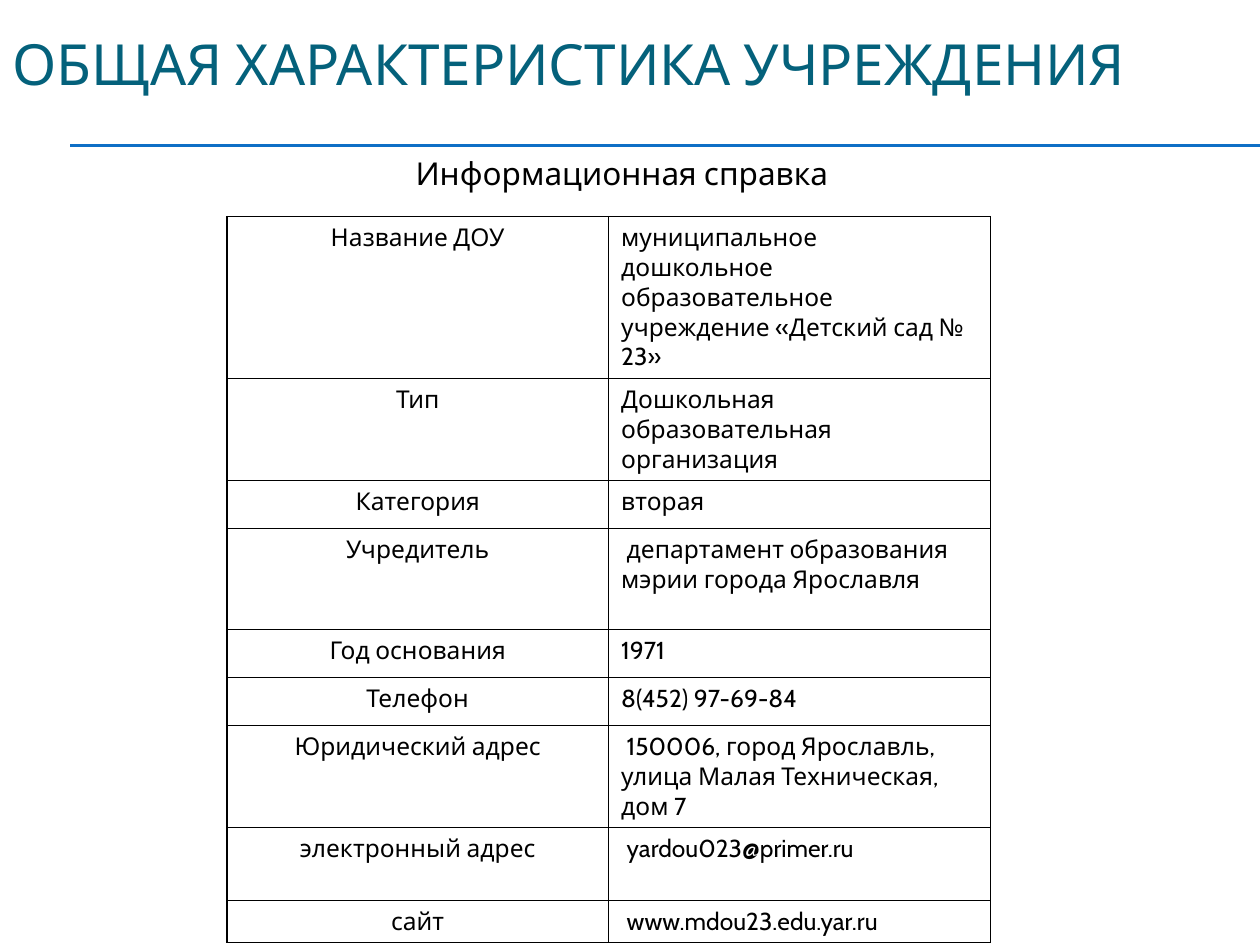
import lxml.etree
import pptx
import pptx.dml.color
import pptx.enum.shapes
import pptx.enum.text
import pptx.oxml
import pptx.oxml.ns
import pptx.util

Pt = pptx.util.Pt
ALIGN = pptx.enum.text.PP_ALIGN
ANCHOR = pptx.enum.text.MSO_ANCHOR
FONT = "Cabin"
BLACK = "000000"
TITLE_COLOR = "04617B"
RULE_COLOR = "0F6FC6"

# Label, value, row height
FACTS = [
    ("Название ДОУ", "муниципальное  дошкольное образовательное учреждение «Детский сад № 23»", 92.5),
    ("Тип", "Дошкольная образовательная организация", 58),
    ("Категория", "вторая", 27.5),
    ("Учредитель", " департамент образования мэрии города Ярославля", 57.5),
    ("Год основания", "1971", 27.5),
    ("Телефон", "8(452) 97-69-84", 27.5),
    ("Юридический адрес", " 150006, город Ярославль, улица Малая Техническая, дом 7", 58),
    ("электронный адрес", " yardou023@primer.ru", 41.5),
    ("сайт", " www.mdou23.edu.yar.ru", 24),
]


def color(hex_string):
    return pptx.dml.color.RGBColor.from_string(hex_string)


def write(text_frame, text, size, hex_string, alignment=ALIGN.LEFT):
    text_frame.text = text
    paragraph = text_frame.paragraphs[0]
    paragraph.alignment = alignment
    paragraph.font.name = FONT
    paragraph.font.size = Pt(size)
    paragraph.font.color.rgb = color(hex_string)


def add_title(slide, text):
    title = slide.shapes.title
    title.left, title.top, title.width, title.height = Pt(0), Pt(22.3), Pt(684), Pt(66.2)
    write(title.text_frame, text, 32.4, TITLE_COLOR)
    title.text_frame.auto_size = pptx.enum.text.MSO_AUTO_SIZE.NONE
    title.text_frame.vertical_anchor = ANCHOR.MIDDLE


def add_rule(slide, top):
    rule = slide.shapes.add_connector(
        pptx.enum.shapes.MSO_CONNECTOR.STRAIGHT, Pt(40.3), Pt(top), Pt(720), Pt(top))
    rule.line.color.rgb = color(RULE_COLOR)
    rule.line.width = Pt(0.75)
    lxml.etree.SubElement(rule._element.spPr, pptx.oxml.ns.qn("a:effectLst"))


def add_subtitle(slide, text):
    box = slide.shapes.add_textbox(Pt(230.4), Pt(84.2), Pt(300.2), Pt(29))
    box.text_frame.word_wrap = True
    write(box.text_frame, text, 18, BLACK)


def add_borders(cell):
    properties = cell._tc.get_or_add_tcPr()
    for position, side in enumerate(("lnL", "lnR", "lnT", "lnB")):
        border = pptx.oxml.parse_xml(
            f'<a:{side} {pptx.oxml.ns.nsdecls("a")} w="{Pt(1)}"><a:solidFill>'
            f'<a:srgbClr val="{BLACK}"/></a:solidFill></a:{side}>')
        properties.insert(position, border)


def add_fact_table(slide, facts):
    frame = slide.shapes.add_table(
        len(facts), 2, Pt(129.6), Pt(123.8), Pt(436.4), Pt(sum(fact[2] for fact in facts)))
    table = frame.table
    table.first_row = False
    table.horz_banding = False
    for row, (label, value, height) in zip(table.rows, facts):
        row.height = Pt(height)
        for cell, text, alignment in zip(row.cells, (label, value), (ALIGN.CENTER, ALIGN.LEFT)):
            write(cell.text_frame, text, 14, BLACK, alignment)
            cell.fill.background()
            add_borders(cell)


def main():
    presentation = pptx.Presentation()
    presentation.slide_width, presentation.slide_height = Pt(720), Pt(540)
    slide = presentation.slides.add_slide(presentation.slide_layouts[5])
    for top in (82.8, 83.5):
        add_rule(slide, top)
    add_fact_table(slide, FACTS)
    add_subtitle(slide, "Информационная справка")
    add_title(slide, "ОБЩАЯ ХАРАКТЕРИСТИКА УЧРЕЖДЕНИЯ\v")
    presentation.save("out.pptx")


if __name__ == "__main__":
    main()
